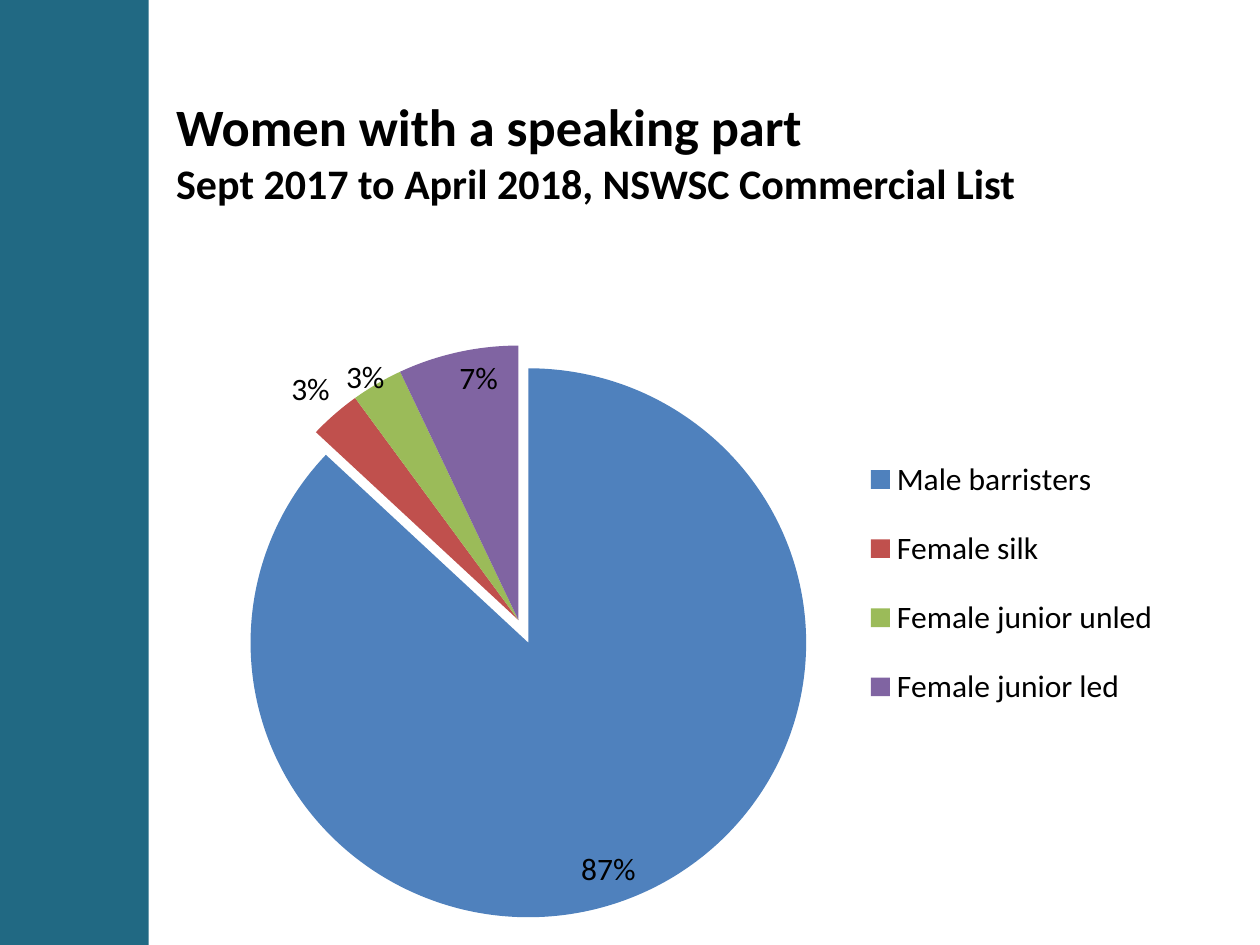
from lxml import etree
from pptx import Presentation
from pptx.chart.data import CategoryChartData
from pptx.dml.color import RGBColor
from pptx.enum import chart as charts, shapes, text
from pptx.oxml.ns import qn
from pptx.util import Inches, Pt

FONT = "Calibri"
BLACK = "000000"
TEAL = "216983"
LABEL = charts.XL_LABEL_POSITION
# category, percentage, colour, label position
SLICES = [
    ("Male barristers", 87, "4F81BD", LABEL.INSIDE_END),
    ("Female silk", 3, "C0504D", LABEL.OUTSIDE_END),
    ("Female junior unled", 3, "9BBB59", LABEL.OUTSIDE_END),
    ("Female junior led", 7, "8064A2", LABEL.INSIDE_END),
]


def colour(value):
    return RGBColor.from_string(value)


def set_layout(parent, index, **values):
    """Give a chart part a manual layout, in fractions of the chart."""
    for old in parent.findall(qn("c:layout")):
        parent.remove(old)
    layout = etree.Element(qn("c:layout"))
    manual = etree.SubElement(layout, qn("c:manualLayout"))
    for name, value in values.items():
        etree.SubElement(manual, qn(f"c:{name}")).set("val", str(value))
    parent.insert(index, layout)


class SlideBuilder:
    def __init__(self, page):
        self.page = page

    def style(self, font, size, bold=False):
        font.name, font.size, font.bold = FONT, Pt(size), bold
        font.color.rgb = colour(BLACK)

    def band(self, left, top, width, height, fill):
        box = self.page.shapes.add_shape(
            shapes.MSO_SHAPE.RECTANGLE,
            Inches(left), Inches(top), Inches(width), Inches(height))
        box.shadow.inherit = False
        box.fill.solid()
        box.fill.fore_color.rgb = colour(fill)
        box.line.fill.background()

    def title(self, left, top, width, height, lines):
        """Add one paragraph whose lines are (wording, size) pairs."""
        box = self.page.shapes.add_textbox(
            Inches(left), Inches(top), Inches(width), Inches(height))
        frame = box.text_frame
        frame.word_wrap = True
        frame.vertical_anchor = text.MSO_ANCHOR.MIDDLE
        para = frame.paragraphs[0]
        para.text = "\v".join(wording for wording, _ in lines)
        for span, (_, size) in zip(para.runs, lines):
            self.style(span.font, size, bold=True)

    def pie(self, left, top, width, height, slices):
        data = CategoryChartData()
        data.categories = [row[0] for row in slices]
        data.add_series("Series 1", [row[1] for row in slices])
        chart = self.page.shapes.add_chart(
            charts.XL_CHART_TYPE.PIE, Inches(left), Inches(top),
            Inches(width), Inches(height), data).chart
        self.style(chart.font, 18)
        chart.has_title = False
        chart.has_legend = True
        chart.legend.position = charts.XL_LEGEND_POSITION.RIGHT
        chart.legend.include_in_layout = False
        chart.plots[0].vary_by_categories = True
        points = chart.plots[0].series[0].points
        for index, (_, _, fill, position) in enumerate(slices):
            point = points[index]
            point.format.fill.solid()
            point.format.fill.fore_color.rgb = colour(fill)
            self.style(point.data_label.font, 18)
            point.data_label.position = position
        root = chart.element
        for label in root.iter(qn("c:dLbl")):
            label.find(qn("c:showVal")).set("val", "0")
            label.find(qn("c:showPercent")).set("val", "1")
        return chart

    def explode(self, chart, index, percent):
        point = list(chart.element.iter(qn("c:dPt")))[index]
        explosion = etree.Element(qn("c:explosion"))
        explosion.set("val", str(percent))
        point.find(qn("c:spPr")).addprevious(explosion)


def main():
    deck = Presentation()
    deck.slide_width, deck.slide_height = Inches(10), Inches(7.5)
    builder = SlideBuilder(deck.slides.add_slide(deck.slide_layouts[6]))
    builder.title(1.3, 0.3, 8.2, 1.8, [
        ("Women with a speaking part", 30),
        ("Sept 2017 to April 2018, NSWSC Commercial List", 24),
    ])
    chart = builder.pie(0.83, 2.33, 9, 4.95, SLICES)
    builder.explode(chart, 0, 9)
    root = chart.element
    set_layout(next(root.iter(qn("c:plotArea"))), 0, layoutTarget="inner",
               xMode="edge", yMode="edge", x=0.12, y=0.08, w=0.49, h=0.9)
    set_layout(next(root.iter(qn("c:legend"))), 1,
               xMode="edge", yMode="edge", x=0.65, y=0.22, w=0.3, h=0.5)
    set_layout(list(root.iter(qn("c:dLbl")))[2], 1, x=0.01, y=0.03)
    builder.band(-0.04, 0, 1.22, 7.5, TEAL)
    deck.save("out.pptx")


if __name__ == "__main__":
    main()
